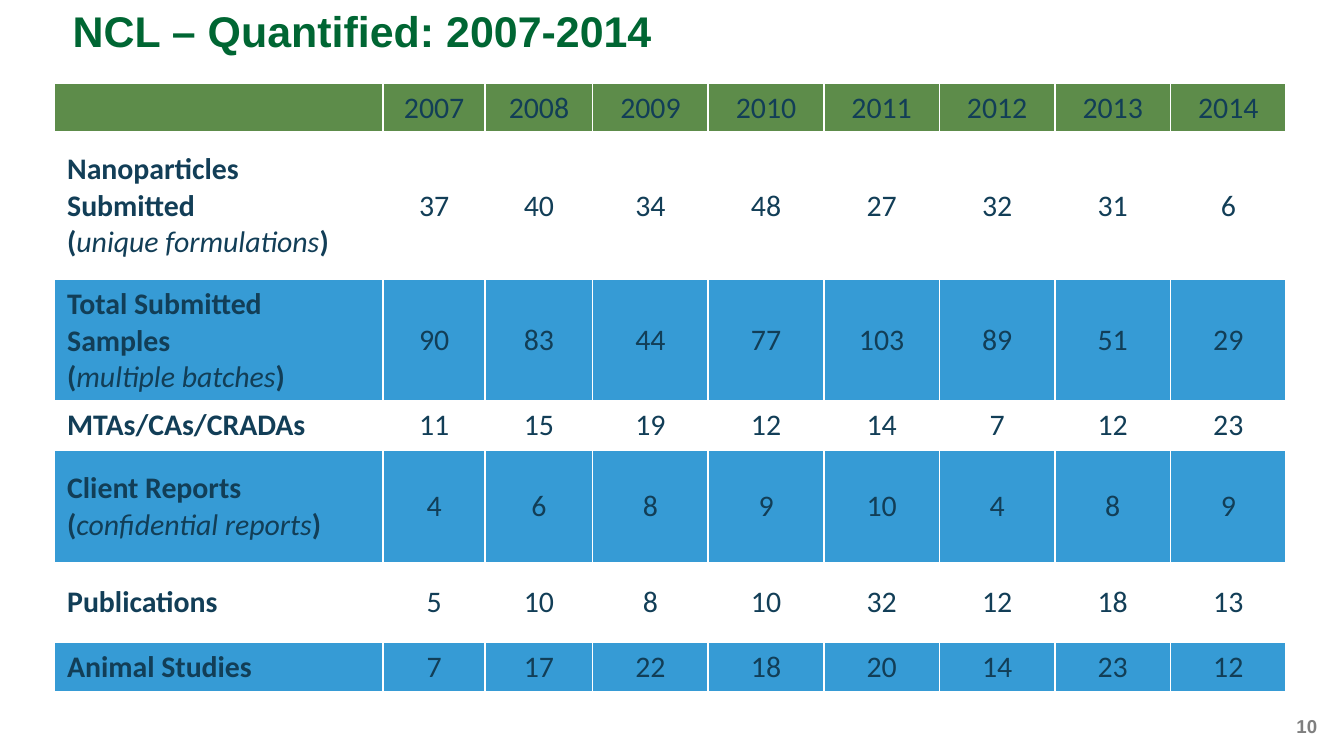
from lxml import etree
from pptx import Presentation
from pptx.dml.color import RGBColor
from pptx.enum.text import MSO_ANCHOR, PP_ALIGN
from pptx.oxml.ns import qn
from pptx.util import Inches, Pt

LEFT, CENTER, RIGHT = PP_ALIGN.LEFT, PP_ALIGN.CENTER, PP_ALIGN.RIGHT
MIDDLE = MSO_ANCHOR.MIDDLE

COLORS = {
    "title": "006633",
    "number": "7F7F7F",
    "text": "123E57",
    "header": "5D8C4A",
    "band": "369BD5",
    "white": "FFFFFF",
}

YEARS = range(2007, 2015)
COLUMN_WIDTHS = [2.45, 0.76, 0.8] + [0.86] * 6
ROW_HEIGHTS = [0.37, 1.09, 0.84, 0.37, 0.84, 0.59, 0.37]

# Each label is a list of paragraphs; the parts of a paragraph alternate bold and italic
ROWS = [
    ([["Nanoparticles Submitted"], ["(", "unique formulations", ")"]],
     [37, 40, 34, 48, 27, 32, 31, 6]),
    ([["Total Submitted Samples"], ["(", "multiple batches", ")"]],
     [90, 83, 44, 77, 103, 89, 51, 29]),
    ([["MTAs/CAs/CRADAs"]], [11, 15, 19, 12, 14, 7, 12, 23]),
    ([["Client Reports (", "confidential reports", ")"]],
     [4, 6, 8, 9, 10, 4, 8, 9]),
    ([["Publications"]], [5, 10, 8, 10, 32, 12, 18, 13]),
    ([["Animal Studies"]], [7, 17, 22, 18, 20, 14, 23, 12]),
]


class SlideBuilder:
    heading_font = "Arial"
    table_font = "Calibri"
    table_size = 16

    def __init__(self, slide):
        self.slide = slide

    def format_font(self, font, name, size, color, bold=False, italic=False):
        font.name = name
        font.size = Pt(size)
        font.bold = bold
        font.italic = italic
        font.color.rgb = RGBColor.from_string(COLORS[color])

    def text(self, text, left, top, width, height, size, color,
             align=LEFT, line_spacing=1.0):
        box = self.slide.shapes.add_textbox(
            Inches(left), Inches(top), Inches(width), Inches(height))
        frame = box.text_frame
        frame.word_wrap = True
        frame.margin_left = frame.margin_right = 0
        frame.margin_top = frame.margin_bottom = 0
        frame.text = text
        paragraph = frame.paragraphs[0]
        paragraph.alignment = align
        paragraph.line_spacing = line_spacing
        self.format_font(paragraph.runs[0].font, self.heading_font, size,
                         color, bold=True)

    def table(self, left, top, height, column_widths, row_heights):
        frame = self.slide.shapes.add_table(
            len(row_heights), len(column_widths), Inches(left), Inches(top),
            Inches(sum(column_widths)), Inches(height))
        table = frame.table
        for column, width in zip(table.columns, column_widths):
            column.width = Inches(width)
        for row, row_height in zip(table.rows, row_heights):
            row.height = Inches(row_height)
        # Row changes resize the frame, so its height is set last
        frame.height = Inches(height)
        return table

    def cell(self, cell, paragraphs, fill, align=CENTER, bold=False,
             top_border=1, bottom_border=1):
        self.borders(cell, {"lnL": 1, "lnR": 1, "lnT": top_border,
                            "lnB": bottom_border})
        cell.fill.solid()
        cell.fill.fore_color.rgb = RGBColor.from_string(COLORS[fill])
        cell.vertical_anchor = MIDDLE
        frame = cell.text_frame
        for index, parts in enumerate(paragraphs):
            paragraph = frame.add_paragraph() if index else frame.paragraphs[0]
            paragraph.alignment = align
            for position, part in enumerate(parts):
                italic = position % 2 == 1
                run = paragraph.add_run()
                run.text = part
                self.format_font(run.font, self.table_font, self.table_size,
                                 "text", bold and not italic, italic)
        if not paragraphs:
            # An empty cell keeps the table's text size, so its row does not grow
            etree.SubElement(frame.paragraphs[0]._p, qn("a:endParaRPr"),
                             sz=str(self.table_size * 100))

    def borders(self, cell, widths):
        properties = cell._tc.get_or_add_tcPr()
        for tag, width in widths.items():
            line = etree.SubElement(properties, qn(f"a:{tag}"), w=str(Pt(width)))
            fill = etree.SubElement(line, qn("a:solidFill"))
            etree.SubElement(fill, qn("a:srgbClr"), val=COLORS["white"])


def main():
    # Widescreen slide, 16:9
    presentation = Presentation()
    presentation.slide_width = Inches(10)
    presentation.slide_height = Inches(10 * 9 / 16)
    builder = SlideBuilder(
        presentation.slides.add_slide(presentation.slide_layouts[6]))

    # Slide number
    builder.text("10", 9.46, 5.32, 0.34, 0.2, 10, "number", RIGHT)

    # Table header
    table = builder.table(0.4, 0.62, 4.53, COLUMN_WIDTHS, ROW_HEIGHTS)
    builder.cell(table.cell(0, 0), [], "header", bottom_border=3)
    for column, year in enumerate(YEARS, 1):
        builder.cell(table.cell(0, column), [[str(year)]], "header",
                     bottom_border=3)

    # Table body, every second row banded
    for row, (label, values) in enumerate(ROWS, 1):
        fill = "white" if row % 2 else "band"
        top_border = 3 if row == 1 else 1
        builder.cell(table.cell(row, 0), label, fill, LEFT, bold=True,
                     top_border=top_border)
        for column, value in enumerate(values, 1):
            builder.cell(table.cell(row, column), [[str(value)]], fill,
                         top_border=top_border)

    # Title
    builder.text("NCL – Quantified: 2007-2014", 0.54, 0.08, 9, 0.35, 23,
                 "title", line_spacing=0.9)

    presentation.save("out.pptx")


if __name__ == "__main__":
    main()
